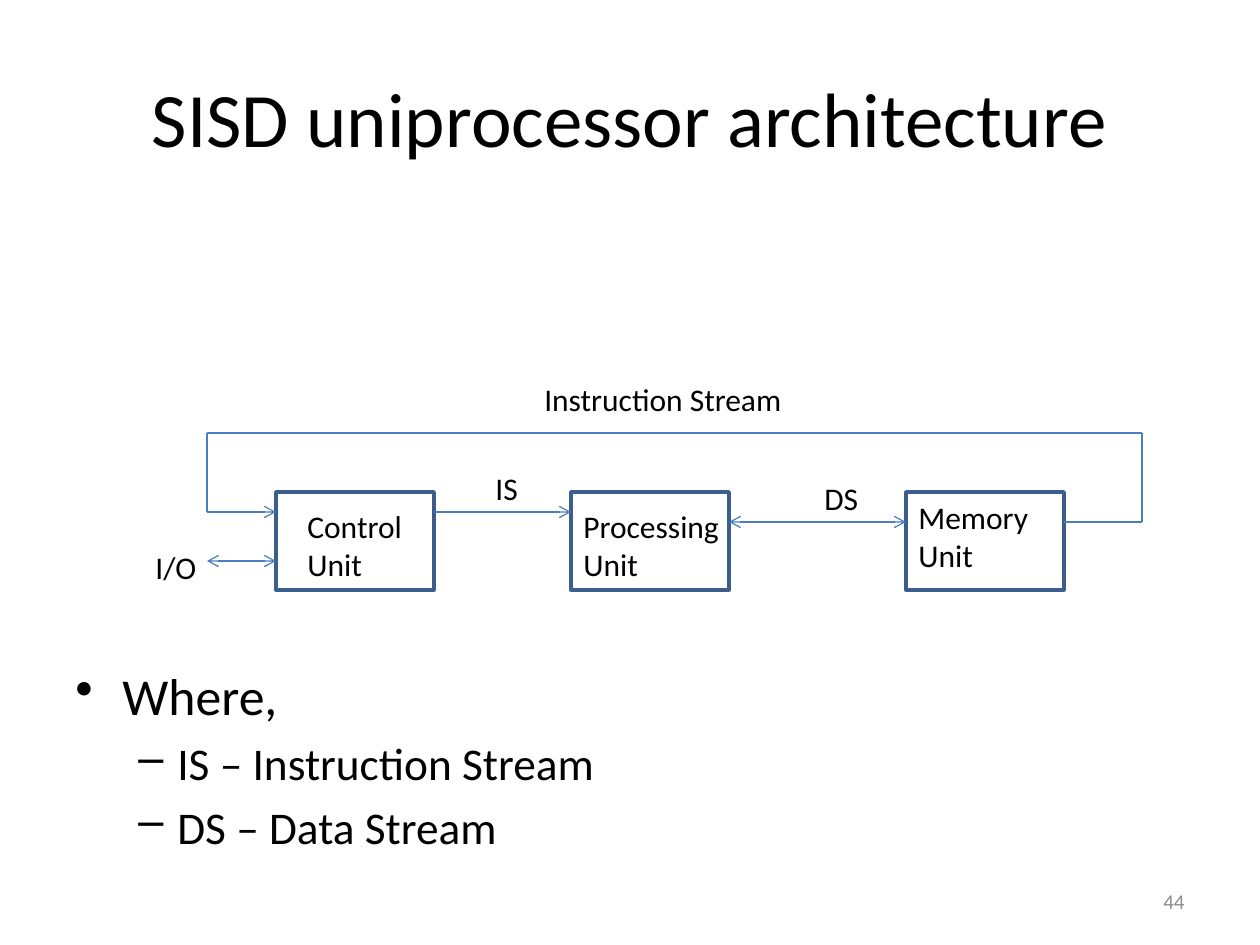
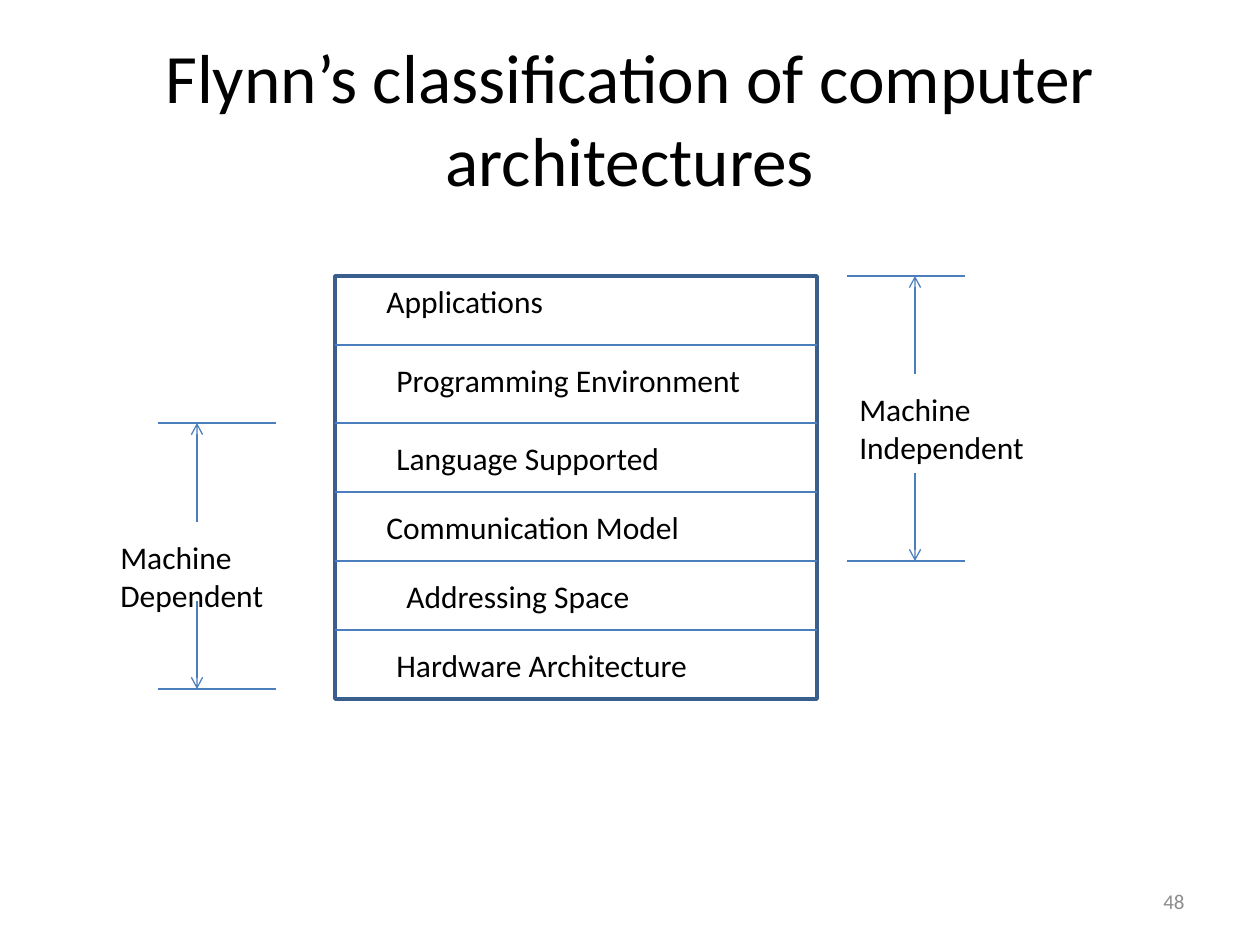
import pptx
import pptx.util
import pptx.dml.color
import pptx.enum.shapes
import pptx.enum.text
import pptx.oxml.ns
from dataclasses import dataclass
from lxml import etree

ALIGN = pptx.enum.text.PP_ALIGN
ANCHOR = pptx.enum.text.MSO_ANCHOR
EMU_PER_PX = 914400 / 126


@dataclass(frozen=True)
class Theme:
    font: str = "Calibri"
    ink: str = "000000"
    muted: str = "8C8C8C"
    fill: str = "FFFFFF"
    outline: str = "3A5F8C"
    wire: str = "4B7EBC"
    outline_width: float = 2
    wire_width: float = 0.75
    title_size: float = 44
    long_title_size: float = 39.6
    label_size: float = 18
    number_size: float = 12
    bullet_size: float = 29.6
    dash_size: float = 25.9


THEME = Theme()
SLIDE_SIZE = (1260, 945)
TITLE_BOX = (63, 38, 1134, 158)
NUMBER_BOX = (903, 876, 294, 50)

# Slide 1: units in a row, joined by wires
UNIT_TOP, UNIT_WIDTH, UNIT_HEIGHT = 492, 158, 98
CONTROL_X, PROCESSING_X, MEMORY_X = 276, 571, 906
LOOP_LEFT, LOOP_RIGHT, LOOP_TOP = 207, 1142, 433
STREAM_Y, DATA_Y, IO_Y = 512, 522, 561
UNIT_LABELS = [
    ("Control Unit", (295, 501, 129, 89)),
    ("Processing Unit", (571, 501, 186, 89)),
    ("Memory Unit", (906, 492, 137, 89)),
]
STREAM_LABELS = [
    ("Instruction Stream", (532, 374, 276, 50)),
    ("I/O", (143, 542, 80, 50)),
    ("DS", (812, 473, 80, 50)),
    ("IS", (483, 463, 80, 50)),
]
# from, to, arrowhead at start, arrowhead at end
WIRES = [
    ((LOOP_LEFT, STREAM_Y), (CONTROL_X, STREAM_Y), False, True),
    ((CONTROL_X + UNIT_WIDTH, STREAM_Y), (PROCESSING_X, STREAM_Y), False, True),
    ((LOOP_LEFT, IO_Y), (CONTROL_X, IO_Y), True, True),
    ((PROCESSING_X + UNIT_WIDTH, DATA_Y), (MEMORY_X, DATA_Y), True, True),
]
RETURN_LOOP = [
    (MEMORY_X + UNIT_WIDTH, DATA_Y), (LOOP_RIGHT, DATA_Y),
    (LOOP_RIGHT, LOOP_TOP), (LOOP_LEFT, LOOP_TOP), (LOOP_LEFT, STREAM_Y),
]
# text, size, marker, left margin, hanging indent
LEGEND_BOX = (63, 658, 1134, 200)
LEGEND = [
    ("Where,", THEME.bullet_size, "•", 47, 47),
    ("IS – Instruction Stream", THEME.dash_size, "–", 102, 39),
    ("DS – Data Stream", THEME.dash_size, "–", 102, 39),
]

# Slide 2: a stack of layers with a span bracket on each side
STACK_BOX = (335, 276, 482, 423)
LAYER_LABEL_GAP = 10
# text, top of the layer, left of its label
LAYERS = [
    ("Applications", 276, 374),
    ("Programming Environment", 345, 384),
    ("Language Supported", 423, 384),
    ("Communication Model", 492, 374),
    ("Addressing Space", 561, 394),
    ("Hardware Architecture", 630, 384),
]
TICK_WIDTH = 118
# text, label left and top, tick left, stem x, (top, upper stem start, lower stem start, bottom)
BRACKETS = [
    ("Machine Independent", (847, 384), 847, 915, (276, 374, 473, 561)),
    ("Machine Dependent", (108, 532), 158, 197, (423, 522, 601, 689)),
]


def px(length):
    return pptx.util.Emu(round(length * EMU_PER_PX))


def color(value):
    return pptx.dml.color.RGBColor.from_string(value)


def format_paragraph(paragraph, text, size, ink=THEME.ink, align=ALIGN.LEFT):
    paragraph.alignment = align
    run = paragraph.add_run()
    run.text = text
    run.font.name = THEME.font
    run.font.size = pptx.util.Pt(size)
    run.font.color.rgb = color(ink)


def add_text(slide, text, box, size=THEME.label_size, anchor=ANCHOR.TOP, **text_format):
    frame = slide.shapes.add_textbox(*map(px, box)).text_frame
    frame.word_wrap = True
    frame.vertical_anchor = anchor
    format_paragraph(frame.paragraphs[0], text, size, **text_format)


def add_legend(slide):
    frame = slide.shapes.add_textbox(*map(px, LEGEND_BOX)).text_frame
    frame.word_wrap = True
    for index, (text, size, marker, margin, hanging) in enumerate(LEGEND):
        paragraph = frame.add_paragraph() if index else frame.paragraphs[0]
        paragraph.space_before = pptx.util.Pt(size * 0.2 if index else 0)
        format_paragraph(paragraph, text, size)
        properties = paragraph._p.get_or_add_pPr()
        properties.set("marL", str(px(margin)))
        properties.set("indent", str(-px(hanging)))
        bullet = etree.SubElement(properties, pptx.oxml.ns.qn("a:buChar"))
        bullet.set("char", marker)


def add_rectangle(slide, box):
    shape = slide.shapes.add_shape(
        pptx.enum.shapes.MSO_SHAPE.RECTANGLE, *map(px, box))
    shape.shadow.inherit = False
    shape.fill.solid()
    shape.fill.fore_color.rgb = color(THEME.fill)
    shape.line.color.rgb = color(THEME.outline)
    shape.line.width = pptx.util.Pt(THEME.outline_width)


def add_wire(slide, start, end, arrow_start=False, arrow_end=False):
    wire = slide.shapes.add_connector(
        pptx.enum.shapes.MSO_CONNECTOR.STRAIGHT, *map(px, start + end))
    wire.line.color.rgb = color(THEME.wire)
    wire.line.width = pptx.util.Pt(THEME.wire_width)
    line = wire.line._get_or_add_ln()
    for tag, shown in (("a:headEnd", arrow_start), ("a:tailEnd", arrow_end)):
        if shown:
            etree.SubElement(line, pptx.oxml.ns.qn(tag)).set("type", "arrow")
    etree.SubElement(wire._element.spPr, pptx.oxml.ns.qn("a:effectLst"))


def add_slide(presentation, title, number, title_size=THEME.title_size):
    """Add a blank slide with the shared title and slide number."""
    slide = presentation.slides.add_slide(presentation.slide_layouts[6])
    add_text(slide, title, TITLE_BOX, size=title_size,
             anchor=ANCHOR.MIDDLE, align=ALIGN.CENTER)
    add_text(slide, number, NUMBER_BOX, size=THEME.number_size,
             anchor=ANCHOR.MIDDLE, align=ALIGN.RIGHT, ink=THEME.muted)
    return slide


def build_sisd(presentation):
    slide = add_slide(presentation, "SISD uniprocessor architecture", "44")
    add_legend(slide)
    for left in (CONTROL_X, PROCESSING_X, MEMORY_X):
        add_rectangle(slide, (left, UNIT_TOP, UNIT_WIDTH, UNIT_HEIGHT))
    for wire in WIRES:
        add_wire(slide, *wire)
    for start, end in zip(RETURN_LOOP, RETURN_LOOP[1:]):
        add_wire(slide, start, end)
    for text, box in UNIT_LABELS + STREAM_LABELS:
        add_text(slide, text, box)


def build_flynn(presentation):
    slide = add_slide(presentation, "Flynn’s classification of computer architectures",
                      "48", title_size=THEME.long_title_size)
    add_rectangle(slide, STACK_BOX)
    left, stack_top, width, _ = STACK_BOX
    for text, top, label_left in LAYERS:
        is_first = top == stack_top
        if not is_first:
            add_wire(slide, (left, top), (left + width, top))
        label_top = top if is_first else top + LAYER_LABEL_GAP
        add_text(slide, text, (label_left, label_top, 394, 50))
    for text, label_corner, tick_left, stem_x, levels in BRACKETS:
        top, upper_start, lower_start, bottom = levels
        add_text(slide, text, label_corner + (217, 89))
        for level, stem_start in ((top, upper_start), (bottom, lower_start)):
            add_wire(slide, (tick_left, level), (tick_left + TICK_WIDTH, level))
            add_wire(slide, (stem_x, stem_start), (stem_x, level), arrow_end=True)


def main():
    presentation = pptx.Presentation()
    presentation.slide_width, presentation.slide_height = map(px, SLIDE_SIZE)
    build_sisd(presentation)
    build_flynn(presentation)
    presentation.save("out.pptx")


if __name__ == "__main__":
    main()
